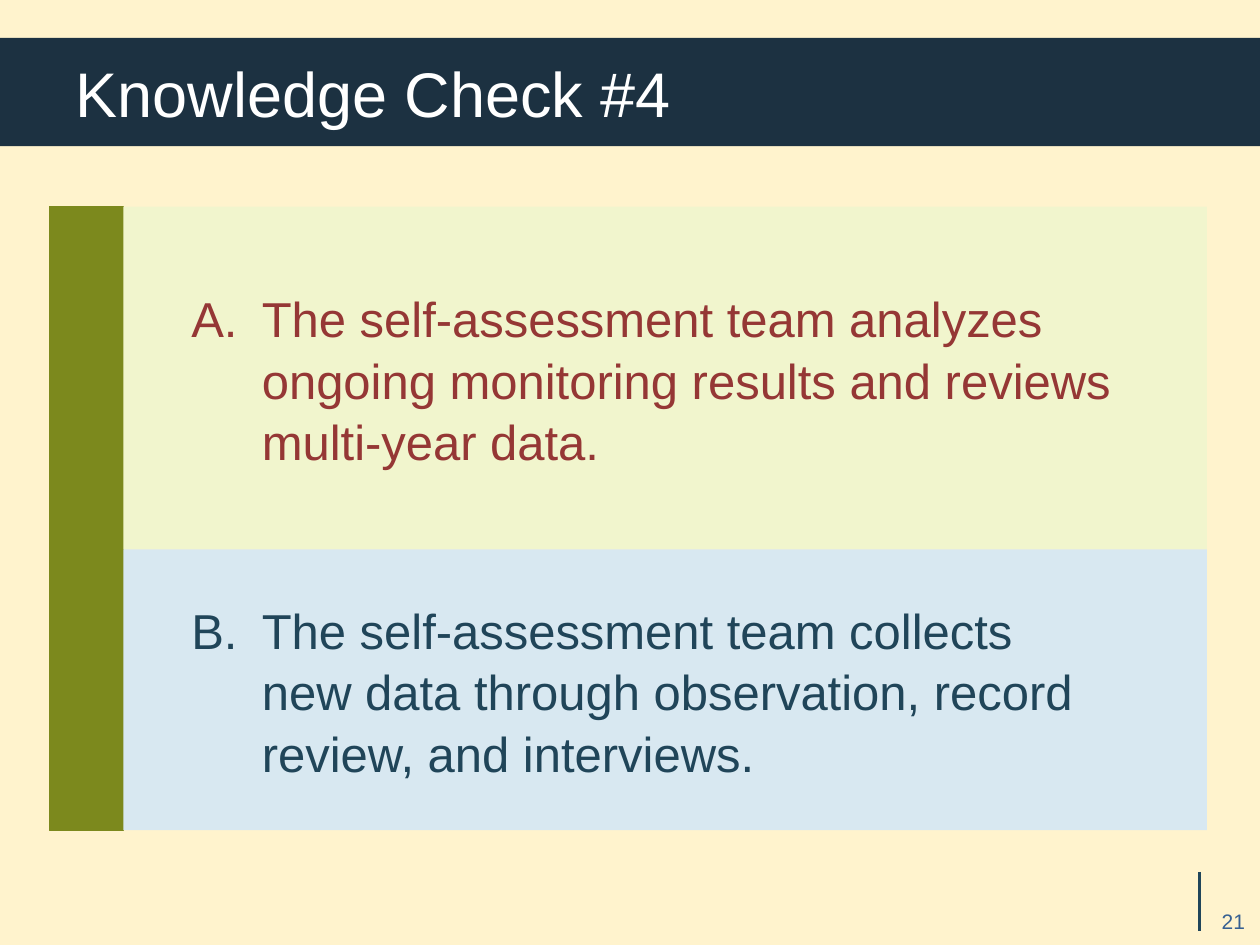
from lxml.etree import SubElement
from pptx import Presentation
from pptx.dml.color import RGBColor
from pptx.enum.shapes import MSO_CONNECTOR, MSO_SHAPE
from pptx.enum.text import MSO_ANCHOR, PP_ALIGN
from pptx.oxml.ns import qn
from pptx.util import Inches, Pt

CREAM = RGBColor(0xFF, 0xF3, 0xCD)
NAVY = RGBColor(0x1C, 0x31, 0x41)
WHITE = RGBColor(0xFF, 0xFF, 0xFF)
OLIVE = RGBColor(0x7C, 0x89, 0x1D)
PALE_GREEN = RGBColor(0xF1, 0xF5, 0xCD)
PALE_BLUE = RGBColor(0xD8, 0xE8, 0xF1)
RED = RGBColor(0x95, 0x37, 0x35)
TEAL = RGBColor(0x20, 0x45, 0x59)
RULE_TEAL = RGBColor(0x20, 0x45, 0x5A)
NUMBER_BLUE = RGBColor(0x37, 0x60, 0x92)

PANEL_LEFT, PANEL_TOP, PANEL_WIDTH = 0.98, 1.64, 8.6
ANSWERS = [
    ("The self-assessment team analyzes ongoing monitoring results and reviews "
     "multi-year data.", 2.72, PALE_GREEN, RED),
    ("The self-assessment team collects\vnew data through observation, record "
     "review, and interviews.", 2.23, PALE_BLUE, TEAL),
]


def style_font(paragraph, size, color):
    paragraph.font.name = "Arial"
    paragraph.font.size = Pt(size)
    paragraph.font.color.rgb = color


def set_title(slide, text):
    title = slide.shapes.title
    title.left, title.top = Inches(0), Inches(0.3)
    title.width, title.height = Inches(10), Inches(0.86)
    title.fill.solid()
    title.fill.fore_color.rgb = NAVY
    frame = title.text_frame
    frame.text = text
    frame.vertical_anchor = MSO_ANCHOR.MIDDLE
    paragraph = frame.paragraphs[0]
    paragraph.alignment = PP_ALIGN.LEFT
    properties = paragraph._p.get_or_add_pPr()
    properties.set("marL", "0")
    properties.set("indent", str(Inches(0.5)))
    style_font(paragraph, 36, WHITE)


def add_rectangle(slide, left, top, width, height, color):
    shape = slide.shapes.add_shape(
        MSO_SHAPE.RECTANGLE, Inches(left), Inches(top), Inches(width), Inches(height))
    shape.shadow.inherit = False
    shape.fill.solid()
    shape.fill.fore_color.rgb = color
    shape.line.fill.background()
    return shape


def letter_paragraph(paragraph, number):
    """Give the paragraph a hanging automatic letter (A., B., ...)."""
    properties = paragraph._p.get_or_add_pPr()
    properties.set("marL", str(Inches(1)))
    properties.set("indent", str(Inches(-0.56)))
    SubElement(properties, qn("a:buFont"), typeface="Arial")
    SubElement(properties, qn("a:buAutoNum"), type="alphaUcPeriod", startAt=str(number))


def add_answer(slide, number, text, top, height, fill, color):
    panel = add_rectangle(slide, PANEL_LEFT, top, PANEL_WIDTH, height, fill)
    frame = panel.text_frame
    frame.word_wrap = True
    frame.vertical_anchor = MSO_ANCHOR.MIDDLE
    paragraph = frame.paragraphs[0]
    paragraph.text = text
    paragraph.alignment = PP_ALIGN.LEFT
    paragraph.line_spacing = 1.05
    letter_paragraph(paragraph, number)
    style_font(paragraph, 28, color)


def add_footer_rule(slide):
    rule = slide.shapes.add_connector(
        MSO_CONNECTOR.STRAIGHT, Inches(9.52), Inches(6.92), Inches(9.52), Inches(7.39))
    rule.line.color.rgb = RULE_TEAL
    rule.line.width = Pt(2)
    SubElement(rule._element.spPr, qn("a:effectLst"))


def add_slide_number(slide, text):
    box = slide.shapes.add_textbox(Inches(9.18), Inches(7.16), Inches(0.8), Inches(0.4))
    box.text_frame.word_wrap = True
    paragraph = box.text_frame.paragraphs[0]
    paragraph.text = text
    paragraph.alignment = PP_ALIGN.RIGHT
    style_font(paragraph, 12, NUMBER_BLUE)


def main():
    presentation = Presentation()
    presentation.slide_width, presentation.slide_height = Inches(10), Inches(7.5)
    slide = presentation.slides.add_slide(presentation.slide_layouts[5])
    slide.background.fill.solid()
    slide.background.fill.fore_color.rgb = CREAM

    side_bar = add_rectangle(slide, 0.39, PANEL_TOP, 0.59, 4.95, OLIVE)
    side_bar.line.color.rgb = OLIVE
    side_bar.line.width = Pt(0.75)
    add_footer_rule(slide)
    set_title(slide, "Knowledge Check #4")
    top = PANEL_TOP
    for number, (text, height, fill, color) in enumerate(ANSWERS, start=1):
        add_answer(slide, number, text, top, height, fill, color)
        top += height
    add_slide_number(slide, "21")
    presentation.save("out.pptx")


if __name__ == "__main__":
    main()
